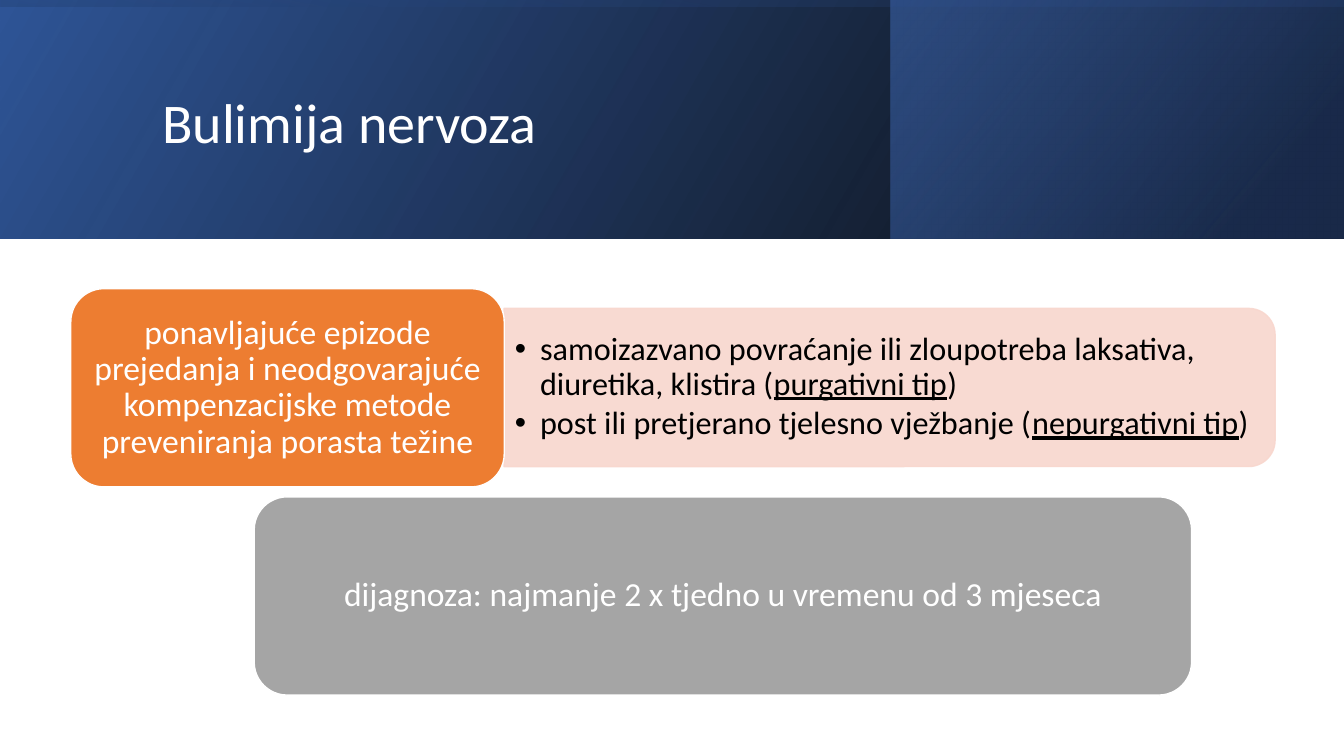
"""Build the slide on bulimia nervosa: gradient banner, linked criteria and diagnosis."""
from lxml import etree
from pptx import Presentation
from pptx.dml.color import RGBColor
from pptx.enum.shapes import MSO_SHAPE as Preset
from pptx.enum.text import MSO_ANCHOR as Anchor, PP_ALIGN as Align
from pptx.oxml import parse_xml
from pptx.oxml.ns import nsdecls, qn
from pptx.util import Pt

COLORS = {
    "white": "FFFFFF", "black": "000000", "blue": "4472C4", "deep_blue": "2F5597",
    "navy": "203864", "pink": "F8D7CE", "orange": "ED7D31", "gray": "A5A5A5",
}


def add_block(preset, box, fill=None, line=None):
    block = slide.shapes.add_shape(preset, *[Pt(length) for length in box])
    block.shadow.inherit = False
    if fill:
        block.fill.solid()
        block.fill.fore_color.rgb = RGBColor.from_string(COLORS[fill])
    if line:
        block.line.color.rgb = RGBColor.from_string(COLORS[line])
        block.line.width = Pt(1)
    else:
        block.line.fill.background()
    return block


def add_run(paragraph, text, size, color, underline=None):
    run = paragraph.add_run()
    run.text = text
    run.font.name = "Calibri"
    run.font.size = Pt(size)
    run.font.color.rgb = RGBColor.from_string(COLORS[color])
    run.font.underline = underline


deck = Presentation()
deck.slide_width, deck.slide_height = Pt(960), Pt(540)
slide = deck.slides.add_slide(deck.slide_layouts[5])

banner_layers = [
    ((0, 0, 960, 170.6), 0, 330, [(0, "black", 96), (100, "deep_blue", 100)]),
    ((636, 0, 324, 170.6), 0, 320, [(19, "navy", 68), (100, "blue", 48)]),
    ((394.7, -394.7, 170.6, 960), 270, 350, [(23, "deep_blue", 16), (99, "black", 45)]),
]
for box, rotation, angle, stops in banner_layers:
    layer = add_block(Preset.RECTANGLE, box, "navy")
    layer.rotation = rotation
    properties = layer.fill._xPr
    properties.find(qn("a:xfrm")).set("flipH", "1")
    stop_xml = "".join(
        f'<a:gs pos="{position * 1000}"><a:srgbClr val="{COLORS[color]}">'
        f'<a:alpha val="{alpha * 1000}"/></a:srgbClr></a:gs>'
        for position, color, alpha in stops)
    gradient = parse_xml(
        f'<a:gradFill {nsdecls("a")} rotWithShape="1"><a:gsLst>{stop_xml}</a:gsLst>'
        f'<a:lin ang="{angle * 60000}" scaled="0"/></a:gradFill>')
    properties.replace(properties.find(qn("a:solidFill")), gradient)

title = slide.shapes.title
title.left, title.top, title.width, title.height = Pt(108.7), Pt(27.4), Pt(765.4), Pt(123.8)
title.text_frame.vertical_anchor = Anchor.MIDDLE
heading = title.text_frame.paragraphs[0]
heading.alignment = Align.LEFT
heading.line_spacing = 0.9
add_run(heading, "Bulimija nervoza", 40, "white")
slide.shapes._spTree.append(title._element)

types_panel = add_block(Preset.ROUND_2_SAME_RECTANGLE, (578.9, 1.4, 113, 550.8), "pink", "pink")
types_panel.rotation = 90
for panel_color in types_panel._element.spPr.iter(qn("a:srgbClr")):
    etree.SubElement(panel_color, qn("a:alpha")).set("val", "90000")

types_text = slide.shapes.add_textbox(Pt(360.7), Pt(225.4), Pt(545), Pt(102.2)).text_frame
types_text.word_wrap = True
types_text.vertical_anchor = Anchor.MIDDLE
bulimia_types = [
    ("samoizazvano povraćanje ili zloupotreba laksativa, diuretika, klistira (",
     "purgativni tip"),
    ("post ili pretjerano tjelesno vježbanje (", "nepurgativni tip"),
]
for index, (behaviour, type_name) in enumerate(bulimia_types):
    item = types_text.add_paragraph() if index else types_text.paragraphs[0]
    item.line_spacing = 0.9
    item.space_after = Pt(3.45)
    item_format = item._p.get_or_add_pPr()
    item_format.set("marL", str(Pt(18)))
    item_format.set("indent", str(-Pt(18)))
    etree.SubElement(item_format, qn("a:buFont")).set("typeface", "Arial")
    etree.SubElement(item_format, qn("a:buChar")).set("char", "•")
    add_run(item, behaviour, 23, "black")
    add_run(item, type_name, 23, "black", True)
    add_run(item, ")", 23, "black")

criteria = [
    ((50.6, 206.2, 309.6, 141.6), "orange",
     "ponavljajuće epizode prejedanja i neodgovarajuće kompenzacijske metode "
     "preveniranja porasta težine"),
    ((181.6, 354.9, 669.6, 141.6), "gray",
     "dijagnoza: najmanje 2 x tjedno u vremenu od 3 mjeseca"),
]
for box, fill, wording in criteria:
    criterion = add_block(Preset.ROUNDED_RECTANGLE, box, fill, "white")
    criterion.text_frame.word_wrap = True
    criterion.text_frame.vertical_anchor = Anchor.MIDDLE
    criterion.text_frame.margin_left = criterion.text_frame.margin_right = Pt(6)
    statement = criterion.text_frame.paragraphs[0]
    statement.alignment = Align.CENTER
    statement.line_spacing = 0.9
    add_run(statement, wording, 24, "white")

deck.save("out.pptx")
